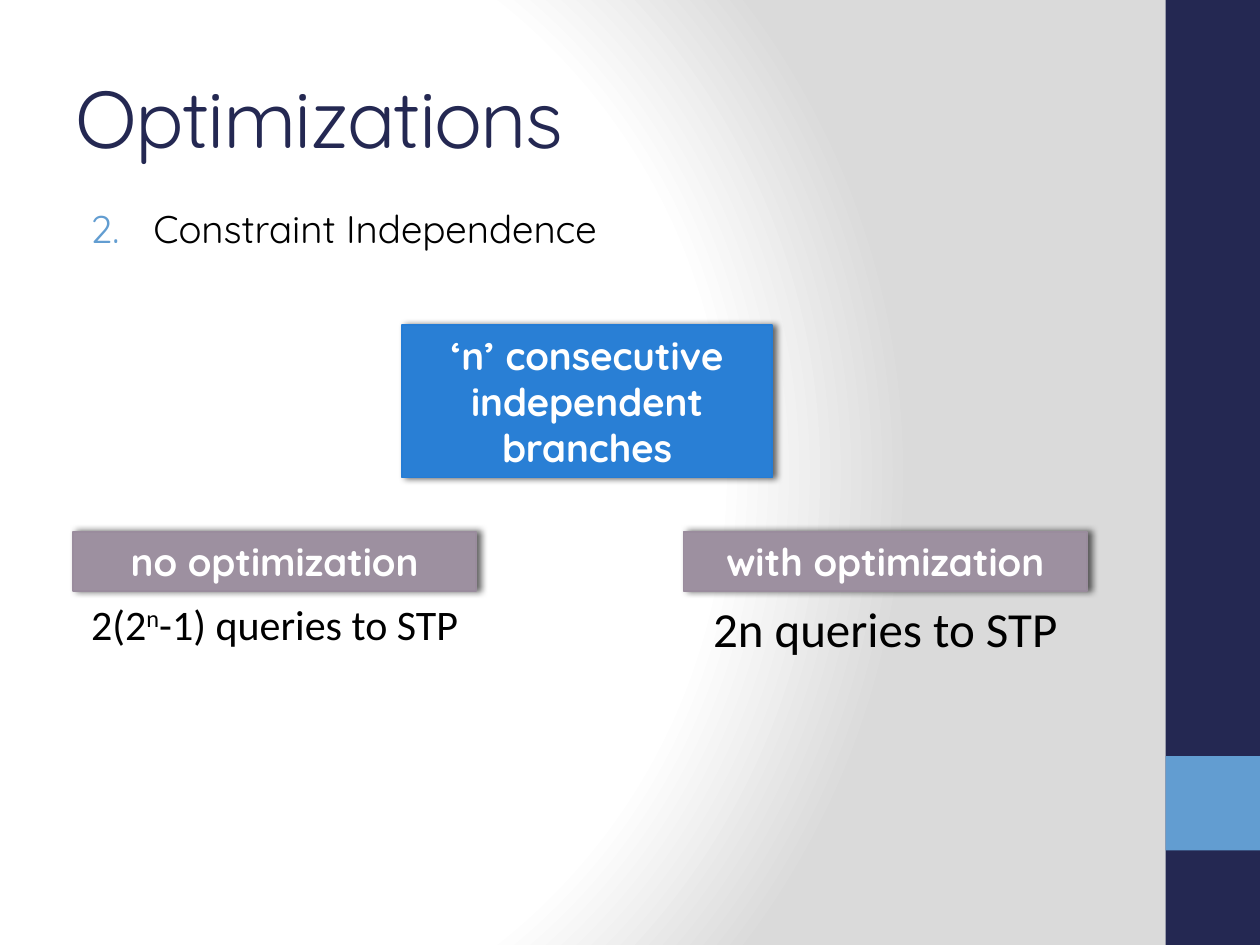
"""Build the slide on constraint independence, on a grid of 40 columns by 30 rows."""
from dataclasses import dataclass

from lxml import etree
from pptx import Presentation
from pptx.dml.color import RGBColor
from pptx.enum.shapes import MSO_SHAPE
from pptx.enum.text import MSO_ANCHOR, MSO_AUTO_SIZE, PP_ALIGN
from pptx.oxml.ns import qn
from pptx.util import Inches, Pt

RECT = MSO_SHAPE.RECTANGLE
LEFT, MID = PP_ALIGN.LEFT, PP_ALIGN.CENTER
TOP, CENTRE = MSO_ANCHOR.TOP, MSO_ANCHOR.MIDDLE
NONE, GROW = MSO_AUTO_SIZE.NONE, MSO_AUTO_SIZE.SHAPE_TO_FIT_TEXT
CELL = Inches(0.25)
COLS, ROWS = 40, 30


@dataclass(frozen=True)
class Theme:
    navy: str = "242852"
    sky: str = "629DD1"
    blue: str = "297FD5"
    rim: str = "247CD5"
    mauve: str = "9D90A0"
    edge: str = "9A8C9D"
    white: str = "FFFFFF"
    black: str = "000000"
    grey: str = "DADADA"
    head: str = "Quicksand"
    body: str = "Calibri"
    title: int = 46
    large: int = 28
    note: int = 24
    text: int = 22


@dataclass(frozen=True)
class Box:
    col: float
    row: float
    wide: float
    high: float

    def place(self) -> list[int]:
        return [round(n * CELL) for n in (self.col, self.row, self.wide, self.high)]


@dataclass(frozen=True)
class Font:
    face: str
    size: int
    hue: str
    bold: bool = False


@dataclass(frozen=True)
class Card:
    box: Box
    text: str
    fill: str
    line: str


@dataclass(frozen=True)
class Note:
    box: Box
    runs: tuple[tuple[str, int], ...]
    size: int


LOOK = Theme()
BARS = ((Box(37, 0, 3, ROWS), LOOK.navy), (Box(37, 24, 3, 3), LOOK.sky))
CARDS = (
    Card(Box(2.32, 16.88, 12.8, 1.88), "no optimization", LOOK.mauve, LOOK.edge),
    Card(Box(21.7, 16.88, 12.8, 1.88), "with optimization", LOOK.mauve, LOOK.edge),
    Card(Box(12.76, 10.32, 11.76, 4.84), "‘n’ consecutive independent branches",
         LOOK.blue, LOOK.rim),
)
NOTES = (
    Note(Box(2.32, 18.8, 12.8, 2),
         (("2(2", 0), ("n", 30), ("-1) queries to STP", 0)), LOOK.note),
    Note(Box(21.7, 18.8, 12.8, 2.28), (("2n queries to STP", 0),), LOOK.large),
)


def add(root, tag: str, **attrs):
    return etree.SubElement(root, qn(tag), attrs)


def tint(root, hue: str):
    return add(root, "a:srgbClr", val=hue)


def shade(slide) -> None:
    slide.background.fill.gradient()
    grad = slide.element.find(".//" + qn("a:gradFill"))
    for kid in list(grad):
        grad.remove(kid)
    stops = add(grad, "a:gsLst")
    for pos, hue in ((0, LOOK.white), (75, LOOK.white), (100, LOOK.grey)):
        tint(add(stops, "a:gs", pos=str(pos * 1000)), hue)
    ring = add(grad, "a:path", path="circle")
    add(ring, "a:fillToRect", l="20000", t="50000", r="100000", b="50000")


def frame(shape, align, anchor, size):
    body = shape.text_frame
    body.word_wrap = True
    body.auto_size = size
    body.vertical_anchor = anchor
    para = body.paragraphs[0]
    para.alignment = align
    return para


def write(para, text: str, font: Font):
    run = para.add_run()
    run.text = text
    run.font.name = font.face
    run.font.size = Pt(font.size)
    run.font.bold = font.bold
    run.font.color.rgb = RGBColor.from_string(font.hue)
    return run


def draw_rect(slide, box: Box, hue: str):
    shape = slide.shapes.add_shape(RECT, *box.place())
    shape.shadow.inherit = False
    shape.fill.solid()
    shape.fill.fore_color.rgb = RGBColor.from_string(hue)
    shape.line.fill.background()
    return shape


def draw_card(slide, card: Card) -> None:
    shape = draw_rect(slide, card.box, card.fill)
    shape.line.color.rgb = RGBColor.from_string(card.line)
    shape.line.width = Pt(1)
    glow = add(shape.element.spPr.find(qn("a:effectLst")), "a:outerShdw",
               blurRad=str(Pt(4)), dist=str(Pt(2)), dir="0", rotWithShape="0")
    add(tint(glow, LOOK.black), "a:alpha", val="60000")
    para = frame(shape, MID, CENTRE, GROW)
    write(para, card.text, Font(LOOK.head, LOOK.text, LOOK.white, True))


def draw_note(slide, note: Note) -> None:
    shape = slide.shapes.add_textbox(*note.box.place())
    para = frame(shape, MID, TOP, GROW)
    for text, lift in note.runs:
        run = write(para, text, Font(LOOK.body, note.size, LOOK.black))
        if lift:
            run.font._element.set("baseline", str(lift * 1000))


def draw_title(slide) -> None:
    title = slide.shapes.title
    title.left, title.top, title.width, title.height = Box(2, 1.2, 33.32, 5).place()
    para = frame(title, LEFT, CENTRE, NONE)
    run = write(para, "Optimizations", Font(LOOK.head, LOOK.title, LOOK.navy))
    run.font._element.set("spc", "-100")


def draw_item(slide) -> None:
    shape = slide.shapes.add_textbox(*Box(2, 6.32, 33.32, 2).place())
    para = frame(shape, LEFT, TOP, NONE)
    para.space_before = Pt(LOOK.text * 0.2)
    props = para._p.get_or_add_pPr()
    props.set("marL", str(Inches(0.62)))
    props.set("indent", str(Inches(-0.5)))
    tint(add(props, "a:buClr"), LOOK.sky)
    add(props, "a:buFont", typeface="+mj-lt")
    add(props, "a:buAutoNum", type="arabicPeriod", startAt="2")
    write(para, "Constraint Independence", Font(LOOK.head, LOOK.text, LOOK.black))


def main() -> None:
    deck = Presentation()
    deck.slide_width, deck.slide_height = COLS * CELL, ROWS * CELL
    slide = deck.slides.add_slide(deck.slide_layouts[5])
    shade(slide)
    for box, hue in BARS:
        draw_rect(slide, box, hue)
    draw_title(slide)
    draw_item(slide)
    for note in NOTES:
        draw_note(slide, note)
    for card in CARDS:
        draw_card(slide, card)
    deck.save("out.pptx")


if __name__ == "__main__":
    main()
